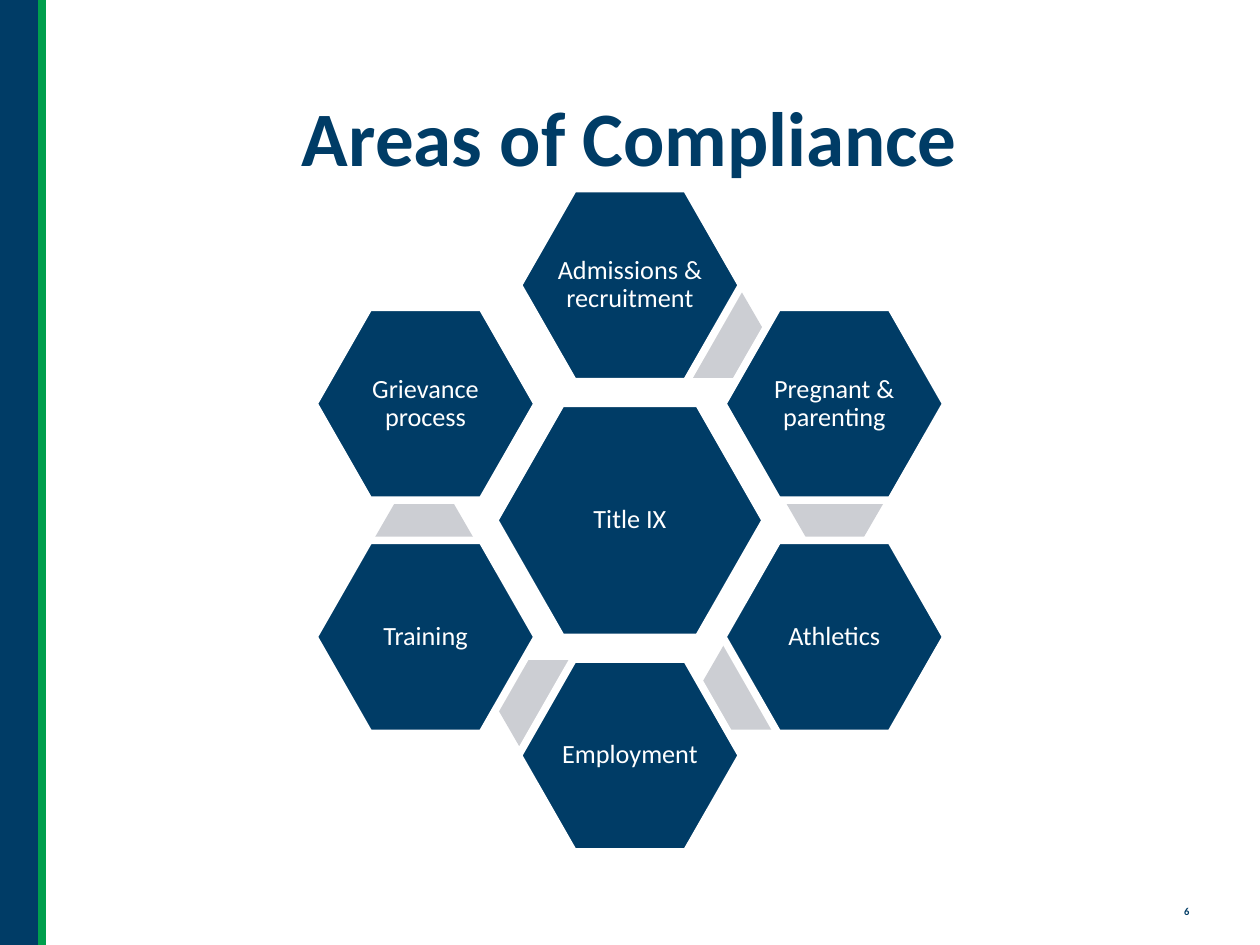
from dataclasses import dataclass

from pptx import Presentation
from pptx.dml.color import RGBColor
from pptx.enum.shapes import MSO_CONNECTOR, MSO_SHAPE
from pptx.enum.text import MSO_ANCHOR, PP_ALIGN
from pptx.oxml import parse_xml
from pptx.oxml.ns import nsdecls
from pptx.util import Cm, Pt

HEX, RECT = MSO_SHAPE.HEXAGON, MSO_SHAPE.RECTANGLE
LINE = MSO_CONNECTOR.STRAIGHT
MIDDLE, CENTER = MSO_ANCHOR.MIDDLE, PP_ALIGN.CENTER


@dataclass(frozen=True)
class Theme:
    navy: RGBColor = RGBColor(0x00, 0x3C, 0x66)
    green: RGBColor = RGBColor(0x00, 0x9F, 0x4D)
    grey: RGBColor = RGBColor(0xCC, 0xCE, 0xD3)
    white: RGBColor = RGBColor(0xFF, 0xFF, 0xFF)
    face: str = "Calibri"
    title: float = 44
    label: float = 15
    number: float = 6
    edge: float = 4.33
    stripe: float = 4.5


@dataclass(frozen=True)
class Cell:
    """A hexagon in cm, placed by its centre's offset from the hub."""
    x: float
    y: float
    wide: float
    high: float
    adj: float
    text: str = ""


THEME = Theme()
WIDE, HIGH = 25.4, 19.05
HUB_X, HUB_Y = 12.7, 10.49
STEP_X, STEP_Y, FAR_Y = 4.12, 2.35, 4.74
BAR = 0.84


def area(x: float, y: float, text: str) -> Cell:
    return Cell(x, y, 4.5, 3.89, 0.286, text)


def link(x: float, y: float) -> Cell:
    return Cell(x, y, 2.06, 1.78, 0.289)


# Back to front: each area covers part of the links before it.
CELLS = (
    Cell(0, 0, 5.46, 4.72, 0.286, "Title IX"),
    link(1.71, -3.76),
    area(0, -FAR_Y, "Admissions & recruitment"),
    link(4.13, -0.43),
    area(STEP_X, -STEP_Y, "Pregnant & parenting"),
    link(2.45, 3.33),
    area(STEP_X, STEP_Y, "Athletics"),
    link(-1.69, 3.71),
    area(0, FAR_Y, "Employment"),
    link(-4.15, 0.41),
    area(-STEP_X, STEP_Y, "Training"),
    area(-STEP_X, -STEP_Y, "Grievance process"),
)


def apply(item, values: dict) -> None:
    for name, value in values.items():
        setattr(item, name, value)


def write(shape, text: str, size: float, color: RGBColor, bold: bool = False,
          pad: float | None = None, space: float = 0.9) -> None:
    frame = shape.text_frame
    frame.text = text
    apply(frame, {"word_wrap": True, "vertical_anchor": MIDDLE})
    if pad is not None:
        sides = ("left", "top", "right", "bottom")
        apply(frame, {f"margin_{side}": Cm(pad) for side in sides})
    para = frame.paragraphs[0]
    apply(para, {"alignment": CENTER, "line_spacing": space})
    font = para.runs[0].font
    apply(font, {"name": THEME.face, "size": Pt(size), "bold": bold})
    font.color.rgb = color


def paint(shape, color: RGBColor) -> None:
    shape.shadow.inherit = False
    shape.fill.solid()
    shape.fill.fore_color.rgb = color
    shape.line.fill.background()


def draw_cell(slide, cell: Cell) -> None:
    shape = slide.shapes.add_shape(
        HEX, Cm(HUB_X + cell.x - cell.wide / 2),
        Cm(HUB_Y + cell.y - cell.high / 2), Cm(cell.wide), Cm(cell.high))
    shape.adjustments[0] = cell.adj
    paint(shape, THEME.navy if cell.text else THEME.grey)
    if cell.text:
        shape.line.color.rgb = THEME.white
        shape.line.width = Pt(THEME.edge)
        write(shape, cell.text, THEME.label, THEME.white, pad=0.05)


def draw_bar(slide) -> None:
    bar = slide.shapes.add_shape(RECT, 0, 0, Cm(BAR), Cm(HIGH))
    paint(bar, THEME.navy)
    stripe = slide.shapes.add_connector(LINE, Cm(BAR), 0, Cm(BAR), Cm(HIGH))
    stripe.line.color.rgb = THEME.green
    stripe.line.width = Pt(THEME.stripe)
    stripe._element.spPr.append(parse_xml(f"<a:effectLst {nsdecls('a')}/>"))


def main() -> None:
    deck = Presentation()
    apply(deck, {"slide_width": Cm(WIDE), "slide_height": Cm(HIGH)})
    slide = deck.slides.add_slide(deck.slide_layouts[5])

    number = slide.shapes.add_textbox(Cm(23.29), Cm(18.11), Cm(1.27), Cm(0.51))
    write(number, "6", THEME.number, THEME.navy, bold=True, space=1.0)
    draw_bar(slide)

    title = slide.shapes.title
    apply(title, {"left": Cm(1.75), "top": Cm(1.02),
                  "width": Cm(21.9), "height": Cm(3.68)})
    write(title, "Areas of Compliance", THEME.title, THEME.navy, bold=True)

    for cell in CELLS:
        draw_cell(slide, cell)
    deck.save("out.pptx")


if __name__ == "__main__":
    main()
